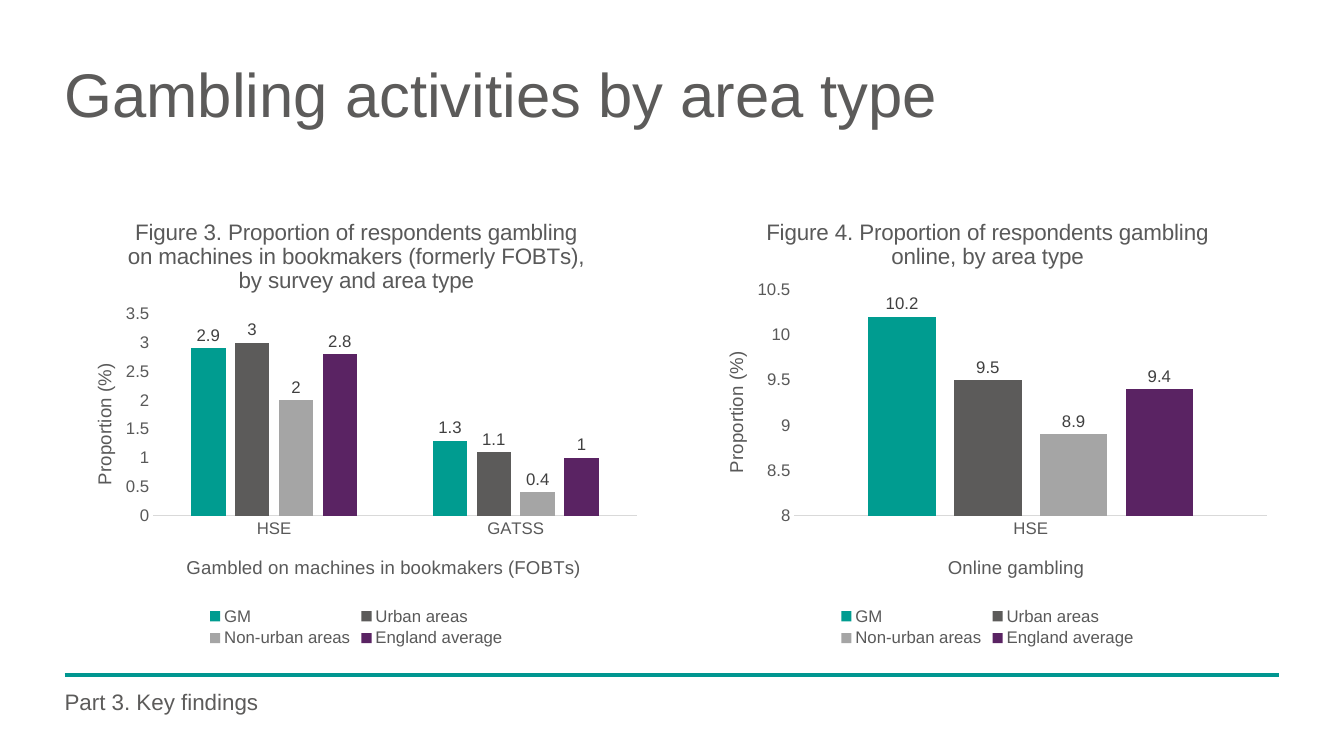
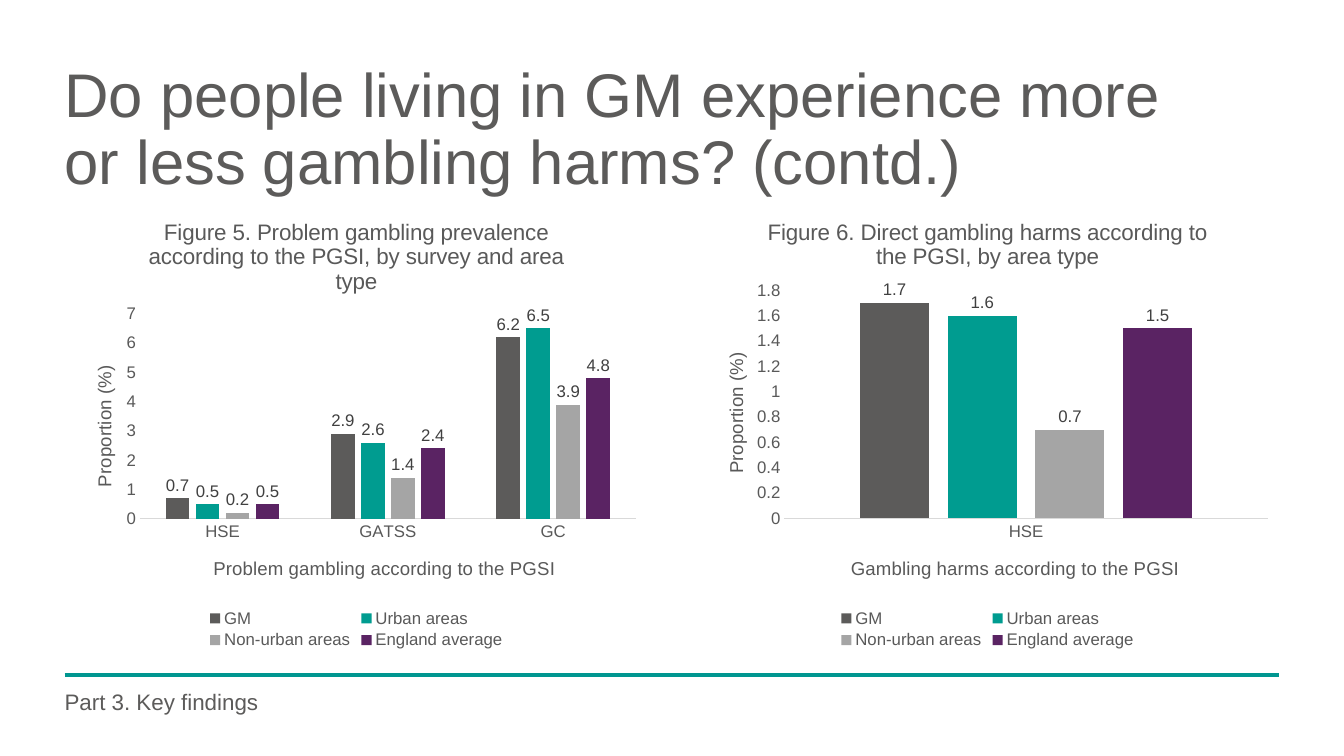
from lxml import etree
from pptx import Presentation
from pptx.chart.data import CategoryChartData
from pptx.dml.color import RGBColor
from pptx.enum.chart import (XL_CHART_TYPE, XL_LABEL_POSITION,
                             XL_LEGEND_POSITION, XL_TICK_MARK)
from pptx.enum.shapes import MSO_CONNECTOR
from pptx.oxml import parse_xml
from pptx.oxml.ns import nsdecls, qn
from pptx.util import Inches, Pt

CLUSTERED = XL_CHART_TYPE.COLUMN_CLUSTERED
LABEL_ABOVE = XL_LABEL_POSITION.OUTSIDE_END
LEGEND_BELOW = XL_LEGEND_POSITION.BOTTOM
NO_TICK = XL_TICK_MARK.NONE

FONT = "Arial"
COLORS = {
    "text": "5C5B5A", "rule": "009690", "chart_text": "595959",
    "label": "404040", "axis": "D9D9D9", "teal": "009C90",
    "gray": "5C5B5A", "silver": "A5A5A5", "purple": "5A2363",
}
LEFT, RIGHT = 0.64, 12.69
CHART_TOP, CHART_WIDTH = 1.98, 5.79
FOOTER = "Part 3. Key findings"
VALUE_TITLE = "Proportion (%)"
AREAS = ["GM", "Urban areas", "Non-urban areas", "England average"]

# Values run in the order of AREAS, one list entry per survey.
# plot is (x, y, width, height); the title spots are (x, y); all are shares of the chart.
SLIDES = [
    {"title": "Gambling activities by area type",
     "colors": ["teal", "gray", "silver", "purple"],
     "chart_height": 4.48,
     "charts": [
         {"title": "Figure 3. Proportion of respondents gambling on machines in "
                   "bookmakers (formerly FOBTs), by survey and area type",
          "axis_title": "Gambled on machines in bookmakers (FOBTs)",
          "surveys": ["HSE", "GATSS"],
          "values": [[2.9, 1.3], [3, 1.1], [2, 0.4], [2.8, 1]],
          "scale": (0, 3.5, 0.5), "plot": (0.152, 0.253, 0.828, 0.447),
          "axis_spot": (0.203, 0.78), "value_spot": (0.042, 0.355)},
         {"title": "Figure 4. Proportion of respondents gambling online, by area type",
          "axis_title": "Online gambling",
          "surveys": ["HSE"],
          "values": [[10.2], [9.5], [8.9], [9.4]],
          "scale": (8, 10.5, 0.5), "plot": (0.169, 0.2, 0.81, 0.5),
          "axis_spot": (0.426, 0.78), "value_spot": (0.043, 0.329)},
     ]},
    {"title": "Do people living in GM experience more or less gambling harms? (contd.)",
     "colors": ["gray", "teal", "silver", "purple"],
     "chart_height": 4.5,
     "charts": [
         {"title": "Figure 5. Problem gambling prevalence according to the PGSI, "
                   "by survey and area type",
          "axis_title": "Problem gambling according to the PGSI",
          "surveys": ["HSE", "GATSS", "GC"],
          "values": [[0.7, 2.9, 6.2], [0.5, 2.6, 6.5], [0.2, 1.4, 3.9], [0.5, 2.4, 4.8]],
          "scale": (0, 7, 1), "plot": (0.129, 0.252, 0.85, 0.452),
          "axis_spot": (0.249, 0.78), "value_spot": (0.042, 0.358)},
         {"title": "Figure 6. Direct gambling harms according to the PGSI, by area type",
          "axis_title": "Gambling harms according to the PGSI",
          "surveys": ["HSE"],
          "values": [[1.7], [1.6], [0.7], [1.5]],
          "scale": (0, 1.8, 0.2), "plot": (0.152, 0.2, 0.828, 0.503),
          "axis_spot": (0.26, 0.78), "value_spot": (0.043, 0.329)},
     ]},
]


def rgb(name):
    return RGBColor.from_string(COLORS[name])


def style_font(font, size, color):
    font.name, font.size, font.bold = FONT, Pt(size), False
    font.color.rgb = rgb(color)


def write_text(frame, text, size, color="text", line_spacing=None, space_before=None):
    para = frame.paragraphs[0]
    para.line_spacing = line_spacing
    if space_before is not None:
        para.space_before = Pt(space_before)
    span = para.add_run()
    span.text = text
    style_font(span.font, size, color)


def add_text_box(slide, text, place, bottom=0, **text_format):
    box = slide.shapes.add_textbox(*map(Inches, place))
    frame = box.text_frame
    frame.word_wrap = True
    frame.margin_left = frame.margin_top = frame.margin_right = 0
    frame.margin_bottom = Inches(bottom)
    write_text(frame, text, line_spacing=0.9, **text_format)


def add_rule(slide):
    y = Inches(6.7)
    rule = slide.shapes.add_connector(MSO_CONNECTOR.STRAIGHT,
                                      Inches(LEFT), y, Inches(RIGHT), y)
    rule.line.color.rgb = rgb("rule")
    rule.line.width = Pt(3)
    etree.SubElement(rule.element.spPr, qn("a:effectLst"))


def set_layout(element, spot, inner=False):
    """Fix a chart part at (x, y) or (x, y, width, height) as shares of the chart."""
    for old in element.findall(qn("c:layout")):
        element.remove(old)
    target = '<c:layoutTarget val="inner"/>' if inner else ""
    modes = '<c:xMode val="edge"/><c:yMode val="edge"/>'
    sides = "".join(f'<c:{side} val="{share}"/>' for side, share in zip("xywh", spot))
    layout = parse_xml(f'<c:layout {nsdecls("c")}><c:manualLayout>{target}{modes}{sides}'
                       '</c:manualLayout></c:layout>')
    text = element.find(qn("c:tx"))
    if text is None:
        element.insert(0, layout)
    else:
        text.addnext(layout)


def style_axis(axis, title, spot):
    axis.has_major_gridlines = False
    axis.major_tick_mark = axis.minor_tick_mark = NO_TICK
    style_font(axis.tick_labels.font, 12, "chart_text")
    write_text(axis.axis_title.text_frame, title, 13.3, "chart_text")
    set_layout(axis.axis_title._element, spot)


def add_column_chart(slide, content, colors, left, height):
    data = CategoryChartData()
    data.categories = content["surveys"]
    for area, values in zip(AREAS, content["values"]):
        data.add_series(area, values)
    place = map(Inches, (left, CHART_TOP, CHART_WIDTH, height))
    chart = slide.shapes.add_chart(CLUSTERED, *place, data).chart
    style_font(chart.font, 10, "chart_text")
    write_text(chart.chart_title.text_frame, content["title"], 16, "chart_text")
    chart.chart_title.include_in_layout = False

    chart.has_legend = True
    chart.legend.position = LEGEND_BELOW
    chart.legend.include_in_layout = False
    style_font(chart.legend.font, 12, "chart_text")

    style_axis(chart.category_axis, content["axis_title"], content["axis_spot"])
    chart.category_axis.format.line.color.rgb = rgb("axis")
    chart.category_axis.format.line.width = Pt(0.75)
    value_axis = chart.value_axis
    style_axis(value_axis, VALUE_TITLE, content["value_spot"])
    value_axis.format.line.fill.background()
    value_axis.minimum_scale, value_axis.maximum_scale, value_axis.major_unit = content["scale"]

    plot = chart.plots[0]
    plot.gap_width, plot.overlap, plot.vary_by_categories = 219, -27, False
    for series, color in zip(plot.series, colors):
        series.format.fill.solid()
        series.format.fill.fore_color.rgb = rgb(color)
        labels = series.data_labels
        labels.show_value = True
        labels.position = LABEL_ABOVE
        style_font(labels.font, 12, "label")
    set_layout(chart._chartSpace.chart.plotArea, content["plot"], inner=True)


def main():
    deck = Presentation()
    deck.slide_width, deck.slide_height = Inches(13.33), Inches(7.5)
    blank = deck.slide_layouts[6]
    for content in SLIDES:
        slide = deck.slides.add_slide(blank)
        add_rule(slide)
        add_text_box(slide, content["title"], (LEFT, 0.64, 11.5, 1.45), size=44)
        for chart, left in zip(content["charts"], (LEFT, RIGHT - CHART_WIDTH)):
            add_column_chart(slide, chart, content["colors"], left, content["chart_height"])
        add_text_box(slide, FOOTER, (LEFT, 6.86, RIGHT - LEFT, 0.42),
                     bottom=0.05, size=16, space_before=10)
    deck.save("out.pptx")


if __name__ == "__main__":
    main()
